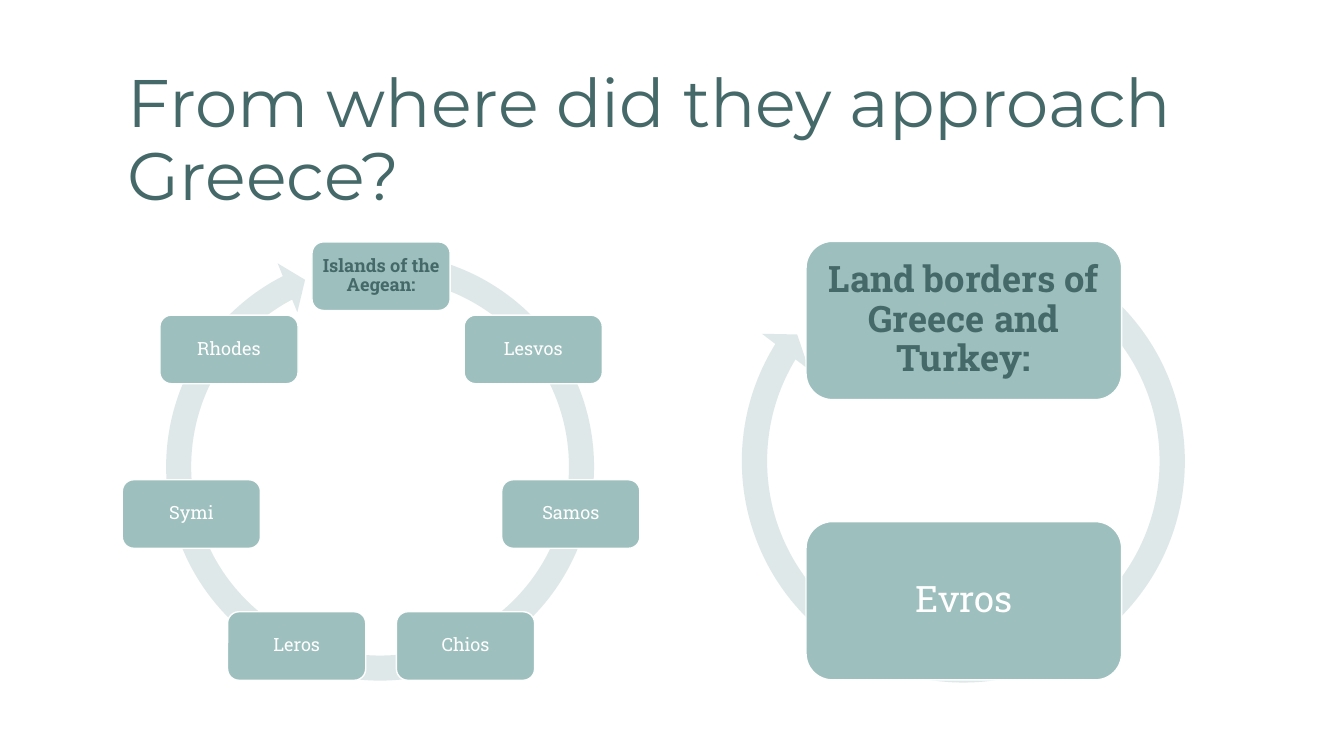
from math import cos, pi, sin
from pptx import Presentation
from pptx.dml.color import RGBColor
from pptx.enum.shapes import MSO_SHAPE
from pptx.enum.text import MSO_ANCHOR, PP_ALIGN
from pptx.util import Pt

TITLE = "From where did they approach Greece?"
CYCLES = [
    dict(names=["Islands of the Aegean:", "Lesvos", "Samos", "Chios", "Leros", "Symi", "Rhodes"],
         center=(378, 467), radius=193, box=(137, 68), size=13, inset=5,
         ring=(151, 237, 452), bend=[0.055, 3.307, 145.58, 169.261, 0.058]),
    dict(names=["Land borders of Greece and Turkey:", "Evros"],
         center=(956, 457), radius=139, box=(313, 157), size=26, inset=11,
         ring=(719, 221, 473), bend=[0.053, 3.439, 126.958, 180.752, 0.062]),
]
DARK, TEAL, PALE, WHITE = "456968", "9DBFBE", "DFE8E8", "FFFFFF"
SCALE = 9144


def px(n):
    return round(n * SCALE)


def color(code):
    return RGBColor.from_string(code)


def write(shape, text, font="Roboto Slab", size=13, ink=WHITE, bold=False,
          align=PP_ALIGN.CENTER, inset=(10, 5)):
    frame = shape.text_frame
    frame.word_wrap = True
    frame.vertical_anchor = MSO_ANCHOR.MIDDLE
    frame.margin_left = frame.margin_right = px(inset[0])
    frame.margin_top = frame.margin_bottom = px(inset[1])
    para = frame.paragraphs[0]
    para.alignment = align
    para.line_spacing = 0.9
    run = para.add_run()
    run.text = text
    run.font.name = font
    run.font.size = Pt(size)
    run.font.bold = bold
    run.font.color.rgb = color(ink)


def draw(slide, kind, left, top, width, height, fill, line=None):
    shape = slide.shapes.add_shape(kind, px(left), px(top), px(width), px(height))
    shape.shadow.inherit = False
    shape.fill.solid()
    shape.fill.fore_color.rgb = color(fill)
    if line:
        shape.line.color.rgb = color(line)
        shape.line.width = Pt(1)
    else:
        shape.line.fill.background()
    return shape


def cycle(slide, names, center, radius, box, size, inset, ring, bend):
    left, top, side = ring
    arrow = draw(slide, MSO_SHAPE.CIRCULAR_ARROW, left, top, side, side, PALE)
    for i, value in enumerate(bend):
        arrow.adjustments[i] = value
    width, height = box
    for i, name in enumerate(names):
        angle = 2 * pi * i / len(names)
        x = center[0] + radius * sin(angle) - width / 2
        y = center[1] - radius * cos(angle) - height / 2
        node = draw(slide, MSO_SHAPE.ROUNDED_RECTANGLE, x, y, width, height, TEAL, WHITE)
        head = i == 0
        write(node, name, size=size, ink=DARK if head else WHITE, bold=head,
              inset=(inset, inset))


def main():
    deck = Presentation()
    deck.slide_width, deck.slide_height = px(1333), px(750)
    slide = deck.slides.add_slide(deck.slide_layouts[6])
    title = slide.shapes.add_textbox(px(117), px(53), px(1100), px(176))
    write(title, TITLE, font="Montserrat", size=48, ink=DARK, align=PP_ALIGN.LEFT)
    for item in CYCLES:
        cycle(slide, **item)
    deck.save("out.pptx")


if __name__ == "__main__":
    main()
